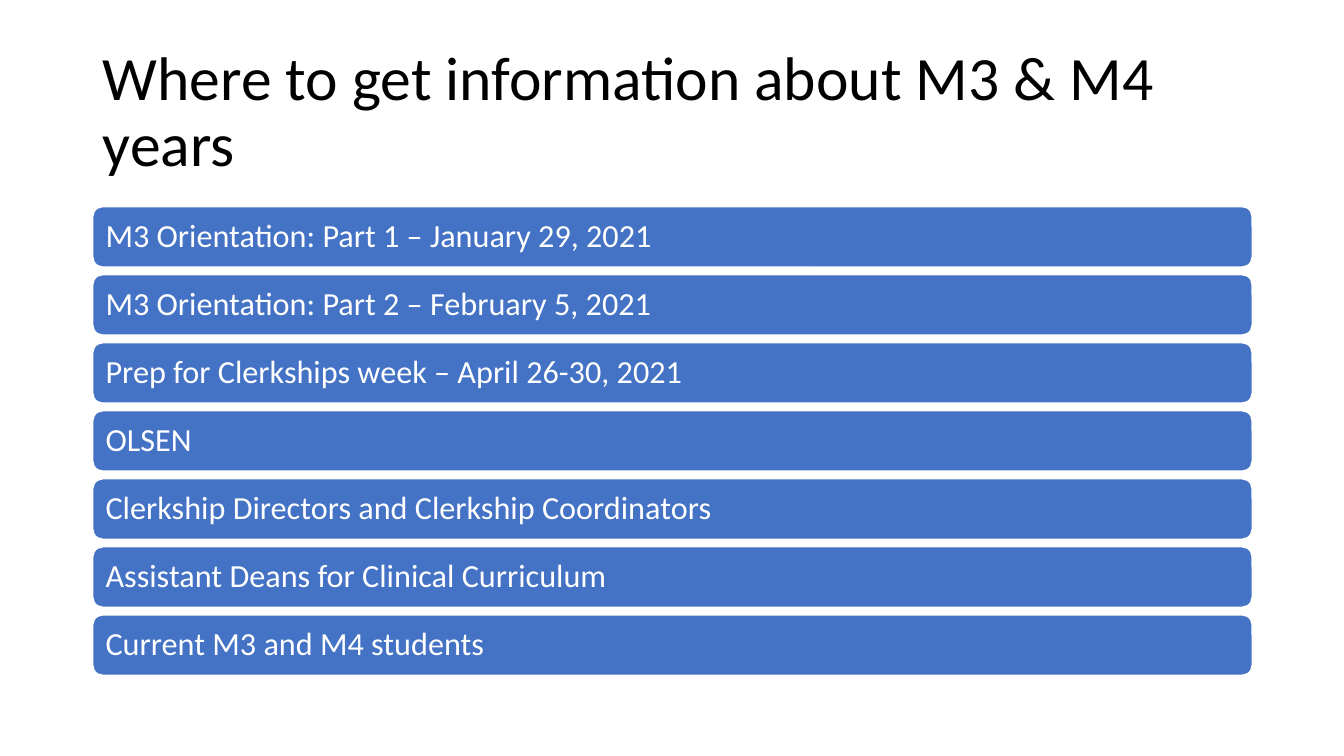
from dataclasses import dataclass

from pptx import Presentation
from pptx.dml.color import RGBColor
from pptx.enum.shapes import MSO_SHAPE
from pptx.enum.text import MSO_ANCHOR, MSO_AUTO_SIZE, PP_ALIGN
from pptx.slide import Slide
from pptx.text.text import TextFrame
from pptx.util import Inches, Pt

ROUND = MSO_SHAPE.ROUNDED_RECTANGLE
MIDDLE = MSO_ANCHOR.MIDDLE
LEFT = PP_ALIGN.LEFT
NO_FIT = MSO_AUTO_SIZE.NONE

FONT = "Calibri"
BLACK, WHITE, BLUE = "000000", "FFFFFF", "4472C4"
EDGE, WIDTH = 0.92, 11.5
TOP, LAST, HEIGHT = 2.05, 6.1, 0.6

TITLE = "Where to get information about M3 & M4 years"
SOURCES = (
    "M3 Orientation: Part 1 – January 29, 2021",
    "M3 Orientation: Part 2 – February 5, 2021",
    "Prep for Clerkships week – April 26-30, 2021",
    "OLSEN",
    "Clerkship Directors and Clerkship Coordinators",
    "Assistant Deans for Clinical Curriculum",
    "Current M3 and M4 students",
)


@dataclass(frozen=True)
class Bar:
    text: str
    top: float


def color(code: str) -> RGBColor:
    return RGBColor.from_string(code)


def set_text(frame: TextFrame, text: str, size: float, code: str) -> None:
    frame.text = text
    frame.word_wrap = True
    frame.auto_size = NO_FIT
    frame.vertical_anchor = MIDDLE
    para = frame.paragraphs[0]
    para.alignment = LEFT
    para.line_spacing = 0.9
    font = para.runs[0].font
    font.name = FONT
    font.size = Pt(size)
    font.color.rgb = color(code)


def add_title(slide: Slide) -> None:
    title = slide.shapes.title
    title.left, title.top = Inches(EDGE), Inches(0.4)
    title.width, title.height = Inches(WIDTH), Inches(1.45)
    set_text(title.text_frame, TITLE, 44, BLACK)


def add_bar(slide: Slide, bar: Bar) -> None:
    shape = slide.shapes.add_shape(
        ROUND, Inches(EDGE), Inches(bar.top), Inches(WIDTH), Inches(HEIGHT)
    )
    shape.shadow.inherit = False
    shape.fill.solid()
    shape.fill.fore_color.rgb = color(BLUE)
    shape.line.color.rgb = color(WHITE)
    shape.line.width = Pt(1)
    set_text(shape.text_frame, bar.text, 23, WHITE)


def main() -> None:
    deck = Presentation()
    deck.slide_width, deck.slide_height = Inches(13.33), Inches(7.5)
    slide = deck.slides.add_slide(deck.slide_layouts.get_by_name("Title Only"))
    add_title(slide)
    step = (LAST - TOP) / (len(SOURCES) - 1)
    for row, text in enumerate(SOURCES):
        add_bar(slide, Bar(text, TOP + row * step))
    deck.save("out.pptx")


if __name__ == "__main__":
    main()
